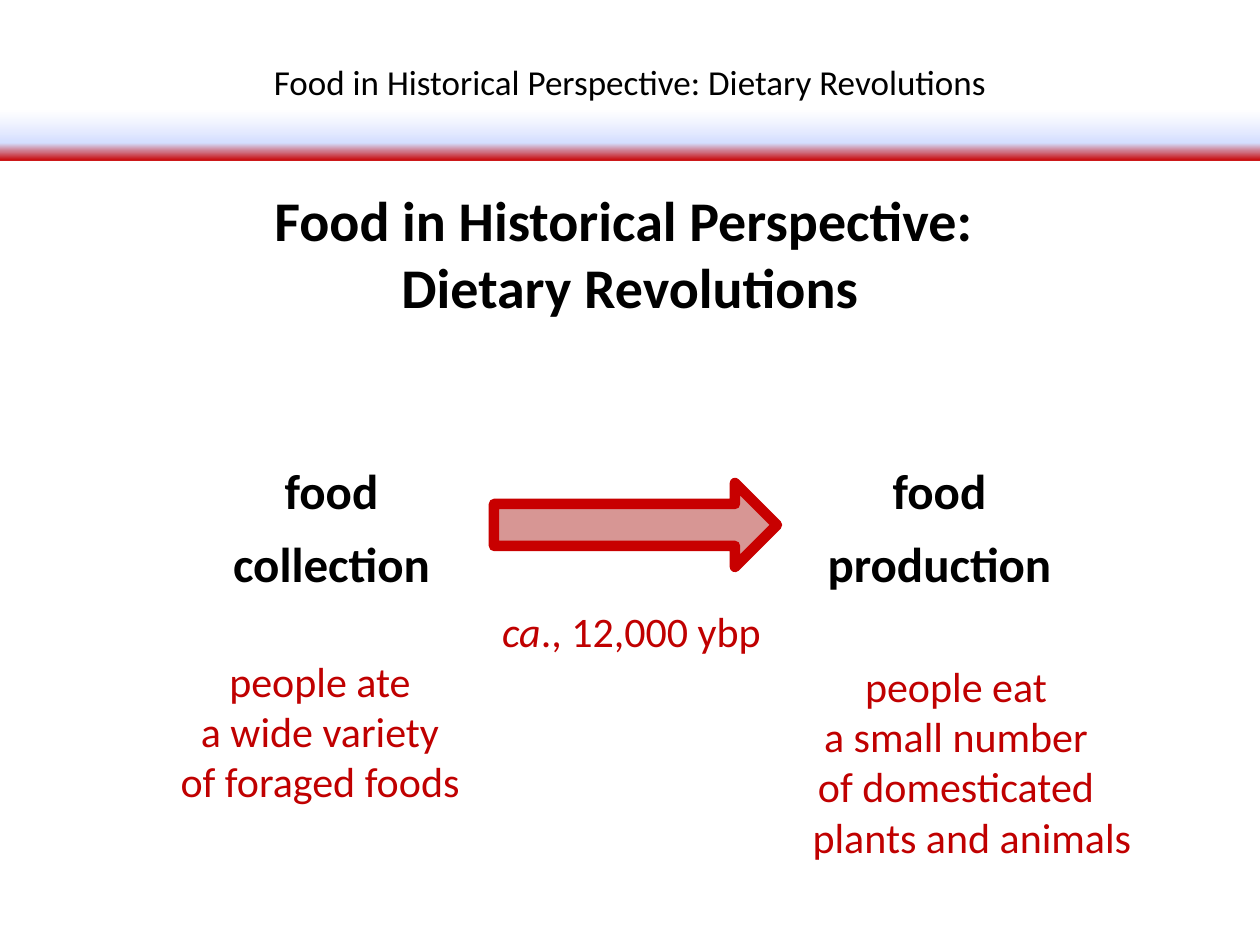
from lxml import etree
from pptx import Presentation
from pptx.dml.color import RGBColor
from pptx.enum.shapes import MSO_SHAPE
from pptx.enum.text import MSO_ANCHOR, PP_ALIGN
from pptx.oxml import parse_xml
from pptx.oxml.ns import qn
from pptx.util import Pt

PX = 914400 // 126
RECTANGLE, ARROW = MSO_SHAPE.RECTANGLE, MSO_SHAPE.RIGHT_ARROW
TOP, CENTER = MSO_ANCHOR.TOP, PP_ALIGN.CENTER
FONT, BLACK, RED = "Calibri", "000000", "C00000"
MAIN_INDENT, SUB_INDENT = (48, -48), (64, -32)
DRAWING = "http://schemas.openxmlformats.org/drawingml/2006/main"
# Position in percent, colour, opacity in percent
BANNER_STOPS = [(53, "FFFFFF", 77), (83, "D4DEFF", 100),
                (100, "C80000", 100), (100, "FFC000", 100)]


def color(value):
    return RGBColor.from_string(value)


def place(*lengths):
    return [length * PX for length in lengths]


def write(shape, lines, size, shade=BLACK, bold=False, level=0, gap=0):
    """Fill a shape with centred lines that share one hanging indent."""
    frame = shape.text_frame
    frame.word_wrap = True
    frame.vertical_anchor = TOP
    frame.text = "\n".join(lines)
    margin, indent = SUB_INDENT if level else MAIN_INDENT
    for number, para in enumerate(frame.paragraphs):
        properties = para._p.get_or_add_pPr()
        properties.set("marL", str(margin * PX))
        properties.set("indent", str(indent * PX))
        para.alignment = CENTER
        para.level = level
        para.space_before = Pt(gap if number else 0)
        for span in para.runs:
            style(span, size, shade, bold)
    return frame


def style(span, size, shade, bold=False, italic=False):
    span.font.name = FONT
    span.font.size = Pt(size)
    span.font.color.rgb = color(shade)
    span.font.bold = bold
    span.font.italic = italic


def add_text(page, area, lines, size, **options):
    return write(page.shapes.add_textbox(*place(*area)), lines, size, **options)


def add_banner(page, area, title):
    banner = page.shapes.add_shape(RECTANGLE, *place(*area))
    banner.shadow.inherit = False
    banner.line.fill.background()
    banner.fill.gradient()
    stops = "".join(
        f'<a:gs pos="{position * 1000}"><a:srgbClr val="{shade}">'
        f'<a:alpha val="{opacity * 1000}"/></a:srgbClr></a:gs>'
        for position, shade, opacity in BANNER_STOPS)
    gradient = parse_xml(
        f'<a:gradFill xmlns:a="{DRAWING}" rotWithShape="1"><a:gsLst>{stops}</a:gsLst>'
        '<a:lin ang="5400000" scaled="0"/></a:gradFill>')
    properties = banner._element.spPr
    properties.replace(properties.find(qn("a:gradFill")), gradient)
    write(banner, [title], 20)


def add_arrow(page, area):
    arrow = page.shapes.add_shape(ARROW, *place(*area))
    arrow.shadow.inherit = False
    arrow.fill.solid()
    arrow.fill.fore_color.rgb = color("D79694")
    arrow.line.color.rgb = color("C80000")
    arrow.line.width = Pt(6)
    etree.SubElement(arrow.line._ln, qn("a:round"))


def main():
    deck = Presentation()
    deck.slide_width, deck.slide_height = place(1260, 945)
    page = deck.slides.add_slide(deck.slide_layouts[6])

    # Heading
    add_banner(page, (0, 54, 1260, 106),
               "Food in Historical Perspective: Dietary Revolutions")
    add_text(page, (126, 179, 1008, 149),
             ["Food in Historical Perspective: ", "Dietary Revolutions"], 32, bold=True)

    # The two ways of getting food
    for left, kind in ((158, "collection"), (766, "production")):
        add_text(page, (left, 454, 315, 146), ["food", kind], 28,
                 bold=True, level=1, gap=8)

    # What people ate under each
    add_text(page, (136, 649, 336, 217),
             ["people ate", "a wide variety", "of foraged foods"], 24,
             shade=RED, level=1)
    add_text(page, (735, 654, 410, 217),
             ["people eat", "a small number", "of domesticated plants and animals"], 24,
             shade=RED, level=1)

    # Transition and its date
    add_arrow(page, (494, 483, 283, 84))
    date = add_text(page, (437, 599, 357, 63), ["ca"], 24, shade=RED, level=1)
    date.paragraphs[0].runs[0].font.italic = True
    years = date.paragraphs[0].add_run()
    years.text = "., 12,000 ybp"
    style(years, 24, RED)

    deck.save("out.pptx")


if __name__ == "__main__":
    main()
